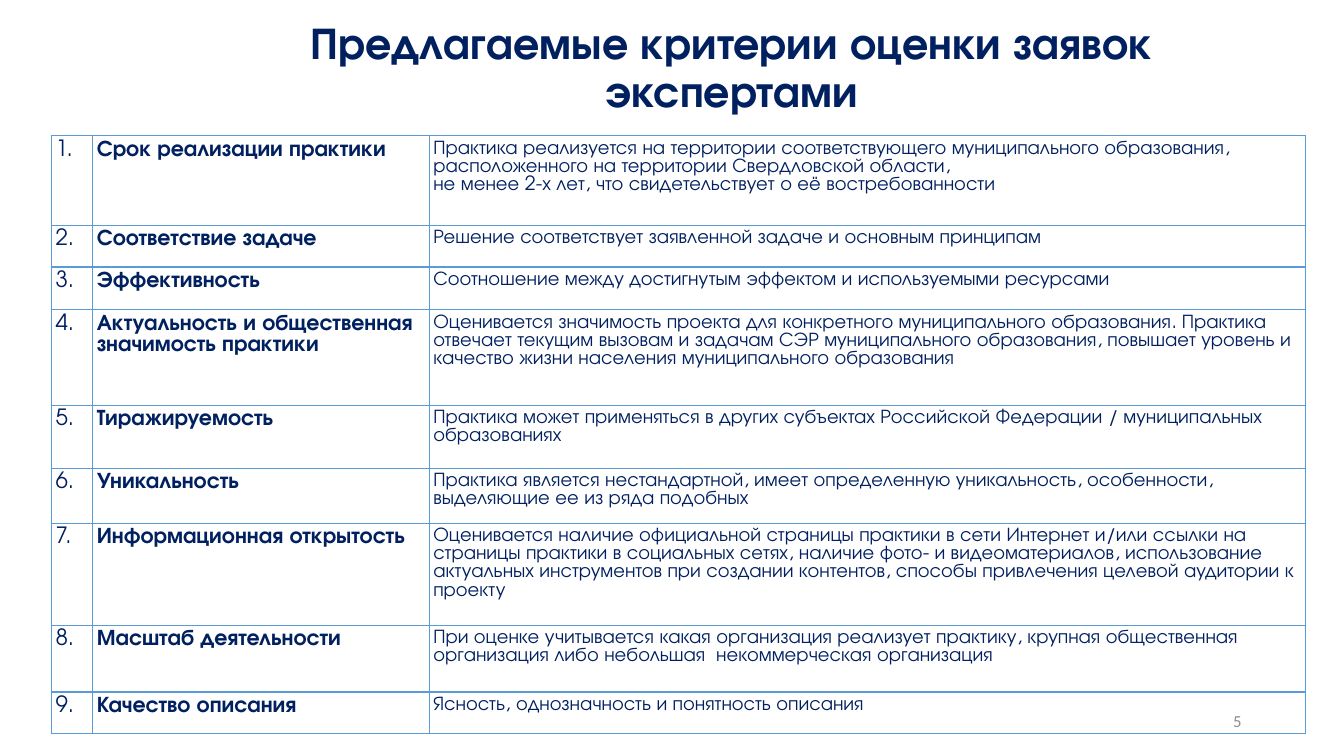
from dataclasses import dataclass

from lxml.etree import SubElement
from pptx import Presentation
from pptx.dml.color import RGBColor
from pptx.enum.text import MSO_ANCHOR, PP_ALIGN
from pptx.oxml.ns import qn
from pptx.util import Cm, Pt


@dataclass(frozen=True)
class Theme:
    ink: str = "002060"
    rule: str = "5B9BD5"
    muted: str = "8C8C8C"
    font: str = "TeX Gyre Adventor"
    number_font: str = "Calibri"
    title_size: int = 32
    criterion_size: int = 16
    detail_size: int = 14
    page_size: int = 12
    rule_width: int = 1
    title_spacing: float = 0.9


THEME = Theme()

COLUMN_WIDTHS = (1.04, 8.48, 22.08)

# Row height in cm, criterion, explanation
CRITERIA = (
    (2.26, "Срок реализации практики",
     "Практика реализуется на территории соответствующего муниципального образования, "
     "расположенного на территории Свердловской области,\n"
     "не менее 2-х лет, что свидетельствует о её востребованности"),
    (1.05, "Соответствие задаче",
     "Решение соответствует заявленной задаче и основным принципам"),
    (1.08, "Эффективность",
     "Соотношение между достигнутым эффектом и используемыми ресурсами"),
    (2.4, "Актуальность и общественная значимость практики",
     "Оценивается значимость проекта для конкретного муниципального образования. "
     "Практика отвечает текущим вызовам и задачам СЭР муниципального образования, "
     "повышает уровень и качество жизни населения муниципального образования"),
    (1.59, "Тиражируемость",
     "Практика может применяться в других субъектах Российской Федерации / "
     "муниципальных образованиях"),
    (1.2, "Уникальность",
     "Практика является нестандартной, имеет определенную уникальность, особенности, "
     "выделяющие ее из ряда подобных"),
    (1.95, "Информационная открытость",
     "Оценивается наличие официальной страницы практики в сети Интернет и/или ссылки "
     "на страницы практики в социальных сетях, наличие фото- и видеоматериалов, "
     "использование актуальных инструментов при создании контентов, способы "
     "привлечения целевой аудитории к проекту"),
    (1.68, "Масштаб деятельности",
     "При оценке учитывается какая организация реализует практику, крупная "
     "общественная организация либо небольшая  некоммерческая организация"),
    (1.05, "Качество описания",
     "Ясность, однозначность и понятность описания"),
)


def style_text(frame, size, color, font=THEME.font, bold=False,
               align=PP_ALIGN.LEFT, spacing=1.0):
    for paragraph in frame.paragraphs:
        paragraph.alignment = align
        paragraph.line_spacing = spacing
        paragraph.font.name = font
        paragraph.font.size = Pt(size)
        paragraph.font.bold = bold
        paragraph.font.color.rgb = RGBColor.from_string(color)


def add_text(slide, box, text, anchor, **style):
    frame = slide.shapes.add_textbox(*map(Cm, box)).text_frame
    frame.word_wrap = True
    frame.vertical_anchor = anchor
    frame.text = text
    style_text(frame, **style)


def add_title(slide, box):
    add_text(slide, box, "Предлагаемые критерии оценки заявок экспертами",
             MSO_ANCHOR.BOTTOM, size=THEME.title_size, color=THEME.ink, bold=True,
             align=PP_ALIGN.CENTER, spacing=THEME.title_spacing)


def add_page_number(slide, box):
    add_text(slide, box, "5", MSO_ANCHOR.MIDDLE, size=THEME.page_size,
             color=THEME.muted, font=THEME.number_font, align=PP_ALIGN.RIGHT)


def draw_borders(cell):
    properties = cell._tc.get_or_add_tcPr()
    for side in ("lnL", "lnR", "lnT", "lnB"):
        line = SubElement(properties, qn(f"a:{side}"), w=str(Pt(THEME.rule_width)))
        fill = SubElement(line, qn("a:solidFill"))
        SubElement(fill, qn("a:srgbClr"), val=THEME.rule)


def fill_cell(cell, text, size, bold=False, bottom=0.1):
    draw_borders(cell)
    cell.fill.background()
    cell.vertical_anchor = MSO_ANCHOR.TOP
    cell.margin_left = cell.margin_right = cell.margin_top = Cm(0.1)
    cell.margin_bottom = Cm(bottom)
    cell.text = text
    style_text(cell.text_frame, size, THEME.ink, bold=bold)


def add_criteria_table(slide, left, top):
    width = sum(COLUMN_WIDTHS)
    height = sum(row_height for row_height, _, _ in CRITERIA)
    table = slide.shapes.add_table(len(CRITERIA), len(COLUMN_WIDTHS), Cm(left),
                                   Cm(top), Cm(width), Cm(height)).table
    table.first_row = table.horz_banding = False
    for column, column_width in zip(table.columns, COLUMN_WIDTHS):
        column.width = Cm(column_width)
    for index, (row_height, criterion, detail) in enumerate(CRITERIA):
        row = table.rows[index]
        row.height = Cm(row_height)
        number_cell, criterion_cell, detail_cell = row.cells
        fill_cell(number_cell, f"{index + 1}.", THEME.criterion_size, bottom=0.2)
        fill_cell(criterion_cell, criterion, THEME.criterion_size, bold=True)
        fill_cell(detail_cell, detail, THEME.detail_size)


def main():
    deck = Presentation()
    deck.slide_width, deck.slide_height = Cm(33.87), Cm(19.05)
    slide = deck.slides.add_slide(deck.slide_layouts[6])
    add_page_number(slide, (23.92, 17.65, 7.62, 1.01))
    add_criteria_table(slide, 1.3, 3.42)
    add_title(slide, (6.9, 0.46, 23.09, 2.62))
    deck.save("out.pptx")


if __name__ == "__main__":
    main()
